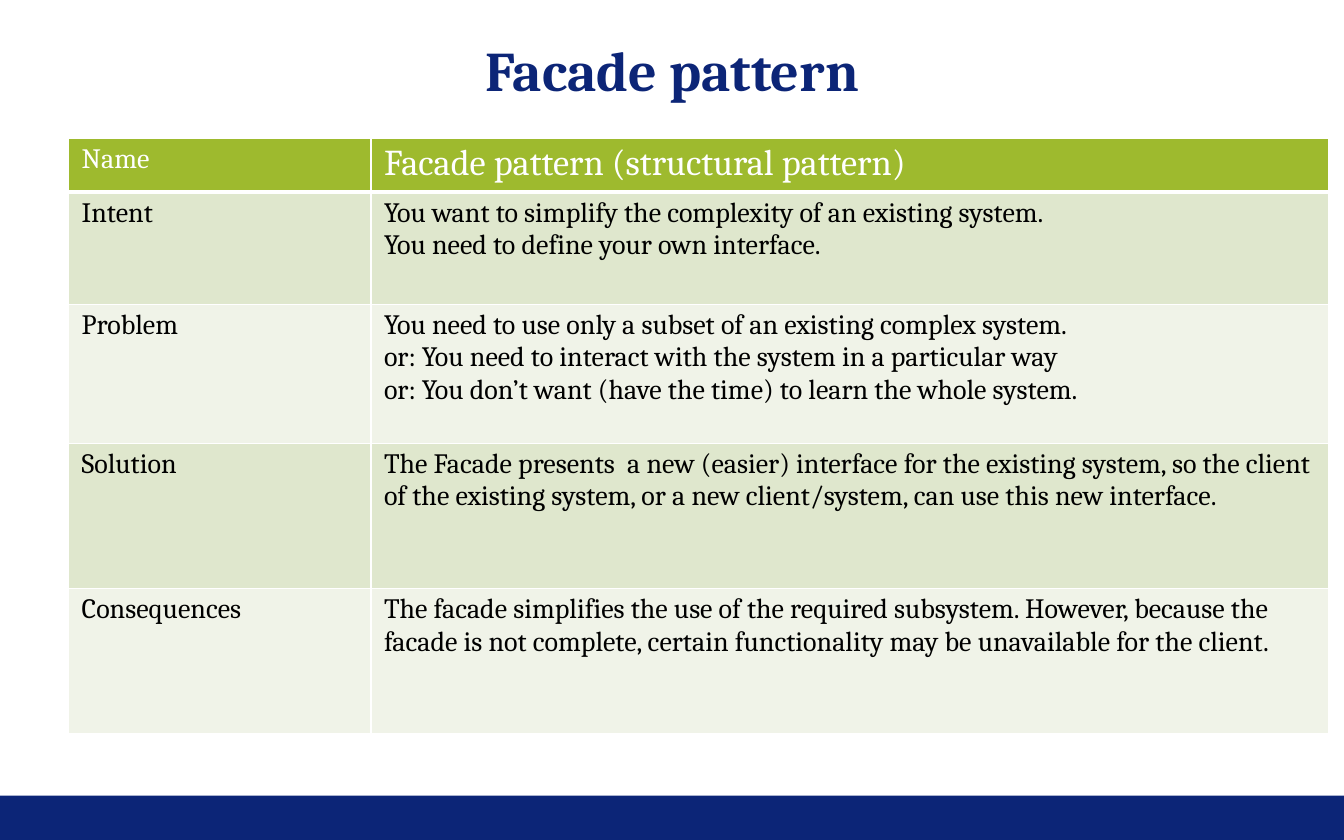
from lxml import etree
from pptx import Presentation
from pptx import util as u
from pptx.dml.color import RGBColor
from pptx.enum import shapes, text
from pptx.oxml.ns import qn

NAVY, GREEN, WHITE, BLACK = "0C2577", "9EBA2E", "FFFFFF", "000000"
BANDS = ["DFE7CD", "F0F3E8"]


def rgb(value):
    return RGBColor.from_string(value)


def add_border(cell, side, points):
    tc_pr = cell._tc.get_or_add_tcPr()
    ln = etree.SubElement(tc_pr, qn("a:" + side), w=str(u.Pt(points)))
    fill = etree.SubElement(ln, qn("a:solidFill"))
    etree.SubElement(fill, qn("a:srgbClr"), val=WHITE)


prs = Presentation()
prs.slide_width, prs.slide_height = u.Cm(33.88), u.Cm(21.18)
s = prs.slides.add_slide(prs.slide_layouts[6])

# Footer band
sp = s.shapes.add_shape(shapes.MSO_SHAPE.RECTANGLE, 0, u.Cm(20.06), prs.slide_width, u.Cm(1.12))
sp.shadow.inherit = False
sp.fill.solid()
sp.fill.fore_color.rgb = rgb(NAVY)
sp.line.fill.background()

# Title
sp = s.shapes.add_textbox(u.Cm(1.12), u.Cm(1.12), u.Cm(31.65), u.Cm(1.24))
tf = sp.text_frame
frame_format = {"word_wrap": True, "vertical_anchor": text.MSO_ANCHOR.MIDDLE,
                "margin_left": 0, "margin_top": 0, "margin_right": 0, "margin_bottom": 0}
for name, value in frame_format.items():
    setattr(tf, name, value)
p = tf.paragraphs[0]
p.alignment = text.PP_ALIGN.CENTER
r = p.add_run()
r.text = "Facade pattern"
for name, value in {"name": "Cambria", "size": u.Pt(40), "bold": True}.items():
    setattr(r.font, name, value)
r.font.color.rgb = rgb(NAVY)

# Pattern table
rows = [
    (1.37, "Name", ["Facade pattern (structural pattern)"]),
    (2.82, "Intent", ["You want to simplify the complexity of an existing system.",
                      "You need to define your own interface."]),
    (3.51, "Problem", ["You need to use only a subset of an existing complex system.",
                       "or: You need to interact with the system in a particular way",
                       "or: You don’t want (have the time) to learn the whole system."]),
    (3.66, "Solution", ["The Facade presents  a new (easier) interface for the existing system, "
                        "so the client of the existing system, or a new client/system, "
                        "can use this new interface."]),
    (3.66, "Consequences", ["The facade simplifies the use of the required subsystem. However, "
                            "because the facade is not complete, certain functionality may be "
                            "unavailable for the client."]),
]
table = s.shapes.add_table(len(rows), 2, u.Cm(1.73), u.Cm(3.48), u.Cm(31.75), u.Cm(15.02)).table
for column, width in zip(table.columns, (7.62, 24.13)):
    column.width = u.Cm(width)

cell_format = {"margin_left": u.Cm(0.33), "margin_right": u.Cm(0.33),
               "margin_top": u.Cm(0.13), "margin_bottom": u.Cm(0.13)}
for i, (height, label, lines) in enumerate(rows):
    table.rows[i].height = u.Cm(height)
    header = i == 0
    for j, paragraphs in enumerate(([label], lines)):
        cell = table.cell(i, j)
        for name, value in cell_format.items():
            setattr(cell, name, value)
        for side in ("lnL", "lnR", "lnT", "lnB"):
            add_border(cell, side, 3 if header and side == "lnB" else 1)
        cell.fill.solid()
        cell.fill.fore_color.rgb = rgb(GREEN if header else BANDS[(i - 1) % 2])
        font_format = {"name": "Cambria", "bold": False,
                       "size": u.Pt(26 if header and j == 1 else 20)}
        tf = cell.text_frame
        for k, line in enumerate(paragraphs):
            p = tf.add_paragraph() if k else tf.paragraphs[0]
            r = p.add_run()
            r.text = line
            for name, value in font_format.items():
                setattr(r.font, name, value)
            r.font.color.rgb = rgb(WHITE if header else BLACK)

prs.save("out.pptx")
